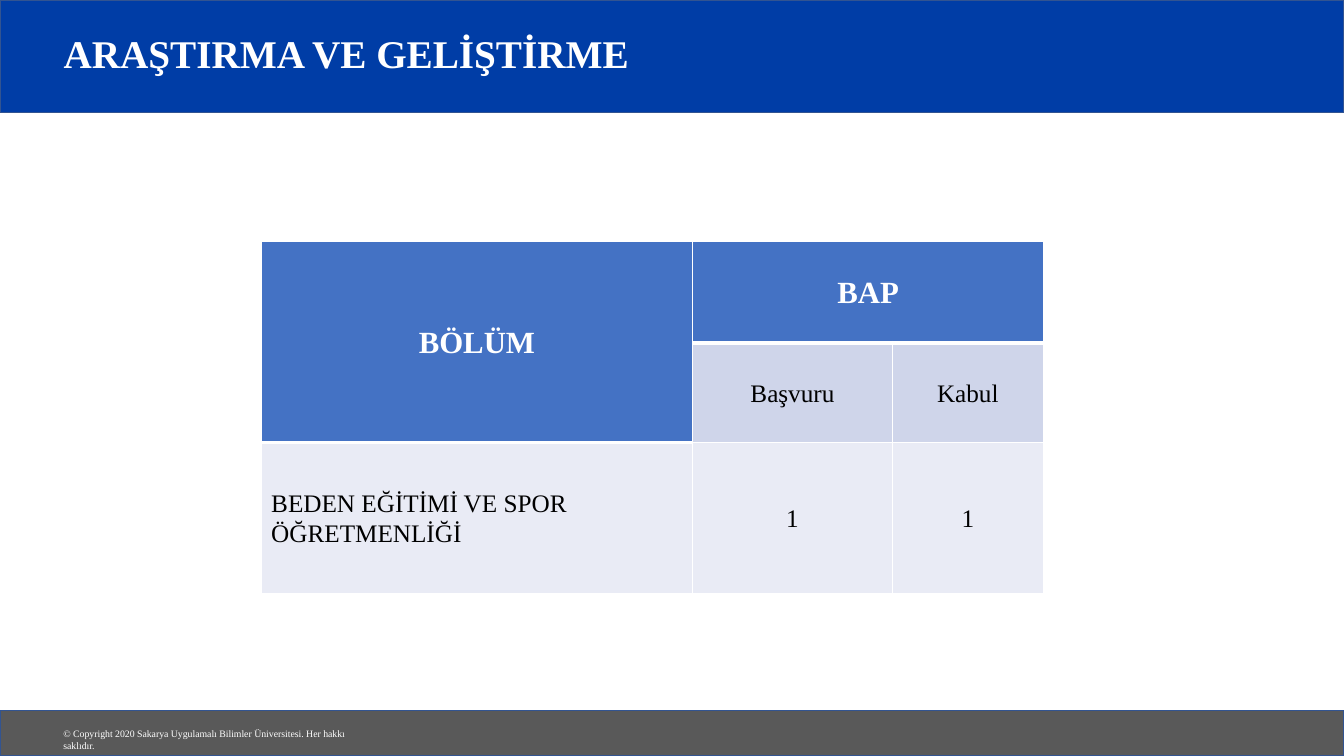
from dataclasses import dataclass

import lxml.etree
import pptx
import pptx.dml.color
import pptx.enum.shapes
import pptx.enum.text
import pptx.oxml.ns
import pptx.util

ALIGN = pptx.enum.text.PP_ALIGN
MIDDLE = pptx.enum.text.MSO_ANCHOR.MIDDLE
FONT = "Times New Roman"
COLORS = {
    "white": "FFFFFF", "black": "000000", "outline": "325491",
    "banner": "003DA6", "footer": "595959",
    "header": "4472C4", "subheader": "CFD5EA", "body": "E9EBF5",
}
WIDTH, HEIGHT = pptx.util.Inches(13.33), pptx.util.Inches(7.5)

# Table tracks, in percent of the slide's width and height
COLUMNS = (32.11, 14.85, 11.25)
ROWS = (13.47, 13.2, 20)


@dataclass(frozen=True)
class Box:
    """A rectangle in percent of the slide's width and height."""
    left: float
    top: float
    width: float
    height: float

    def emu(self) -> tuple[int, int, int, int]:
        return (across(self.left), down(self.top),
                across(self.width), down(self.height))


@dataclass(frozen=True)
class Bar:
    box: Box
    color: str


@dataclass(frozen=True)
class Entry:
    row: int
    col: int
    text: str
    fill: str
    size: float = 18
    color: str = "black"
    bold: bool = False
    align: int = ALIGN.CENTER
    rows: int = 1
    cols: int = 1


BARS = (Bar(Box(0, 0, 100, 14.93), "banner"),
        Bar(Box(0, 94, 100, 6), "footer"))
TITLE_BOX = Box(3.98, 2.53, 82.75, 9.73)
COPYRIGHT_BOX = Box(3.98, 95.6, 24.68, 2.93)
TABLE_BOX = Box(19.43, 31.87, sum(COLUMNS), sum(ROWS))
ENTRIES = (
    Entry(0, 0, "BÖLÜM", "header", 22, "white", True, rows=2),
    Entry(0, 1, "BAP", "header", 22, "white", True, cols=2),
    Entry(1, 1, "Başvuru", "subheader"),
    Entry(1, 2, "Kabul", "subheader"),
    Entry(2, 0, "BEDEN EĞİTİMİ VE SPOR ÖĞRETMENLİĞİ", "body", align=ALIGN.LEFT),
    Entry(2, 1, "1", "body"),
    Entry(2, 2, "1", "body"),
)


def across(share: float) -> int:
    return round(WIDTH * share / 100)


def down(share: float) -> int:
    return round(HEIGHT * share / 100)


def rgb(name: str) -> pptx.dml.color.RGBColor:
    return pptx.dml.color.RGBColor.from_string(COLORS[name])


def write(tf, text: str, size: float, color: str, bold: bool = False,
          align: int = ALIGN.LEFT, spacing: float = 1) -> None:
    p = tf.paragraphs[0]
    p.alignment, p.line_spacing = align, spacing
    r = p.add_run()
    r.text = text
    formats = {"name": FONT, "size": pptx.util.Pt(size), "bold": bold}
    for name, value in formats.items():
        setattr(r.font, name, value)
    r.font.color.rgb = rgb(color)


def add_bar(s, bar: Bar) -> None:
    sp = s.shapes.add_shape(pptx.enum.shapes.MSO_SHAPE.RECTANGLE, *bar.box.emu())
    sp.shadow.inherit = False
    sp.fill.solid()
    sp.fill.fore_color.rgb = rgb(bar.color)
    sp.line.color.rgb = rgb("outline")
    sp.line.width = pptx.util.Pt(1)


def add_borders(cell, top: float, bottom: float) -> None:
    """Draw white cell edges; must run before the cell is filled."""
    qn = pptx.oxml.ns.qn
    props = cell._tc.get_or_add_tcPr()
    for side, points in {"L": 1, "R": 1, "T": top, "B": bottom}.items():
        ln = lxml.etree.SubElement(props, qn(f"a:ln{side}"),
                                   w=str(pptx.util.Pt(points)))
        fill = lxml.etree.SubElement(ln, qn("a:solidFill"))
        lxml.etree.SubElement(fill, qn("a:srgbClr"), val=COLORS["white"])


def fill_entry(table, entry: Entry) -> None:
    last_row, last_col = entry.row + entry.rows - 1, entry.col + entry.cols - 1
    for row in range(entry.row, last_row + 1):
        for col in range(entry.col, last_col + 1):
            cell = table.cell(row, col)
            under_header = entry.row > 0 and (entry.fill == "subheader" or col == 0)
            ends_header = entry.fill == "header" and row == last_row
            add_borders(cell, 3 if under_header else 1, 3 if ends_header else 1)
            cell.fill.solid()
            cell.fill.fore_color.rgb = rgb(entry.fill)
    cell = table.cell(entry.row, entry.col)
    if entry.rows * entry.cols > 1:
        cell.merge(table.cell(last_row, last_col))
    cell.vertical_anchor = MIDDLE
    write(cell.text_frame, entry.text, entry.size, entry.color, entry.bold,
          entry.align, 1.07)


def add_department_table(s) -> None:
    table = s.shapes.add_table(len(ROWS), len(COLUMNS), *TABLE_BOX.emu()).table
    table.first_row = table.horz_banding = False
    for column, share in zip(table.columns, COLUMNS):
        column.width = across(share)
    for row, share in zip(table.rows, ROWS):
        row.height = down(share)
    for entry in ENTRIES:
        fill_entry(table, entry)


def add_title(s) -> None:
    sp = s.shapes.title
    s.shapes.element.append(sp.element)  # bring in front of the banner
    sp.left, sp.top, sp.width, sp.height = TITLE_BOX.emu()
    sp.text_frame.vertical_anchor = MIDDLE
    write(sp.text_frame, "ARAŞTIRMA VE GELİŞTİRME", 28, "white", True, spacing=0.9)


def add_copyright(s) -> None:
    tf = s.shapes.add_textbox(*COPYRIGHT_BOX.emu()).text_frame
    tf.word_wrap = True
    write(tf, "© Copyright 2020 Sakarya Uygulamalı Bilimler Üniversitesi. "
              "Her hakkı saklıdır.", 7, "white")


def main() -> None:
    prs = pptx.Presentation()
    prs.slide_width, prs.slide_height = WIDTH, HEIGHT
    s = prs.slides.add_slide(prs.slide_layouts.get_by_name("Title Only"))
    for bar in BARS:
        add_bar(s, bar)
    add_copyright(s)
    add_title(s)
    add_department_table(s)
    prs.save("out.pptx")


if __name__ == "__main__":
    main()
